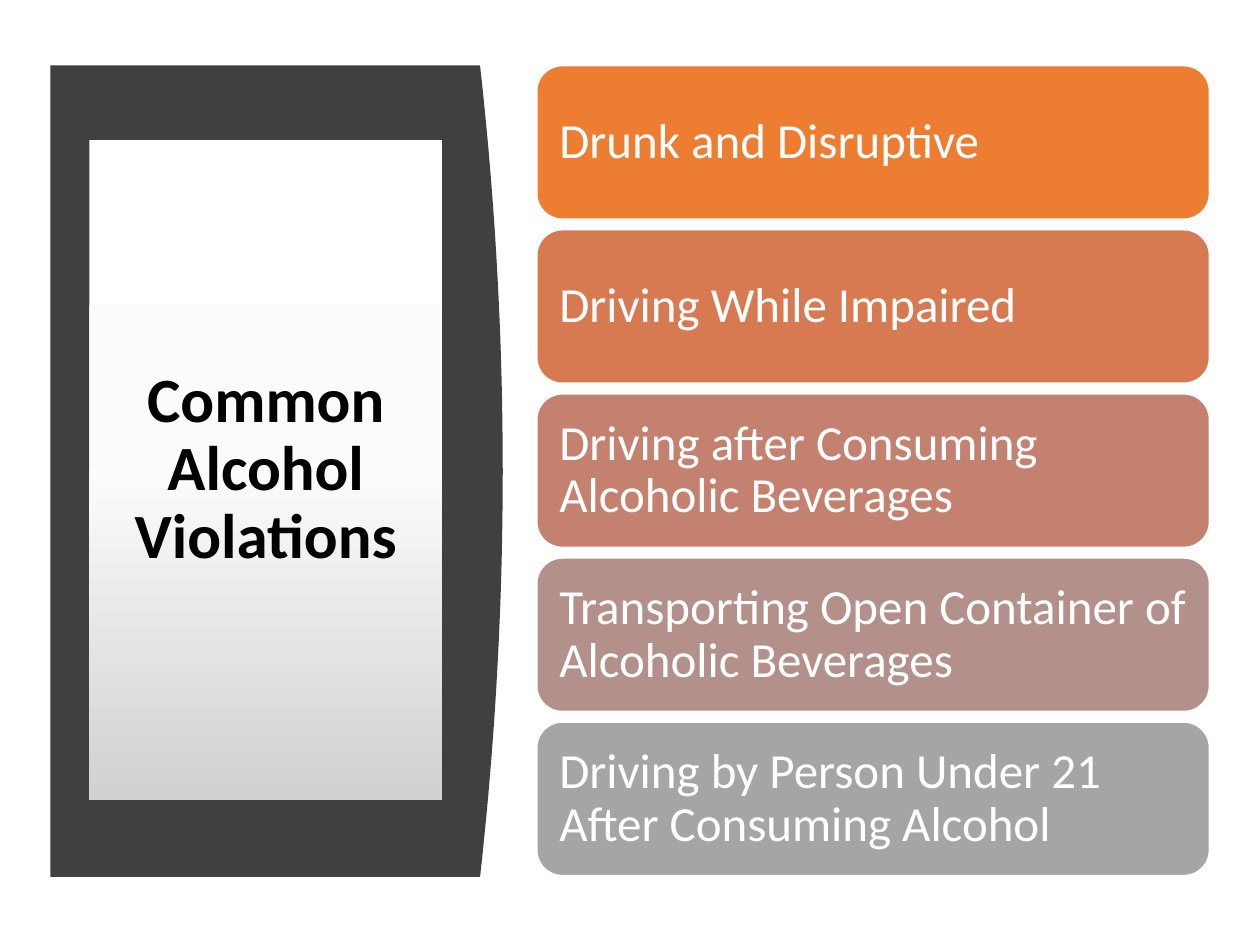
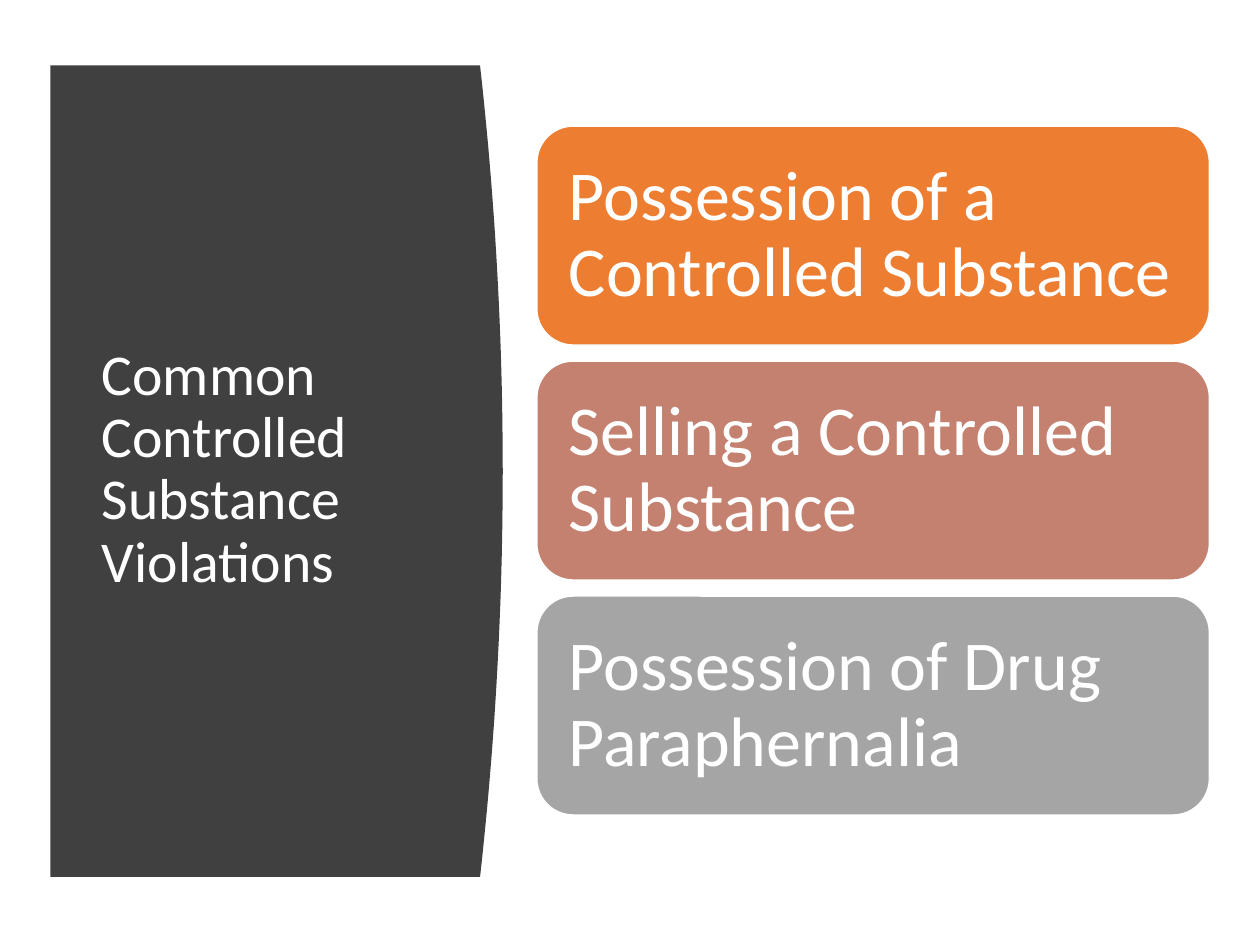
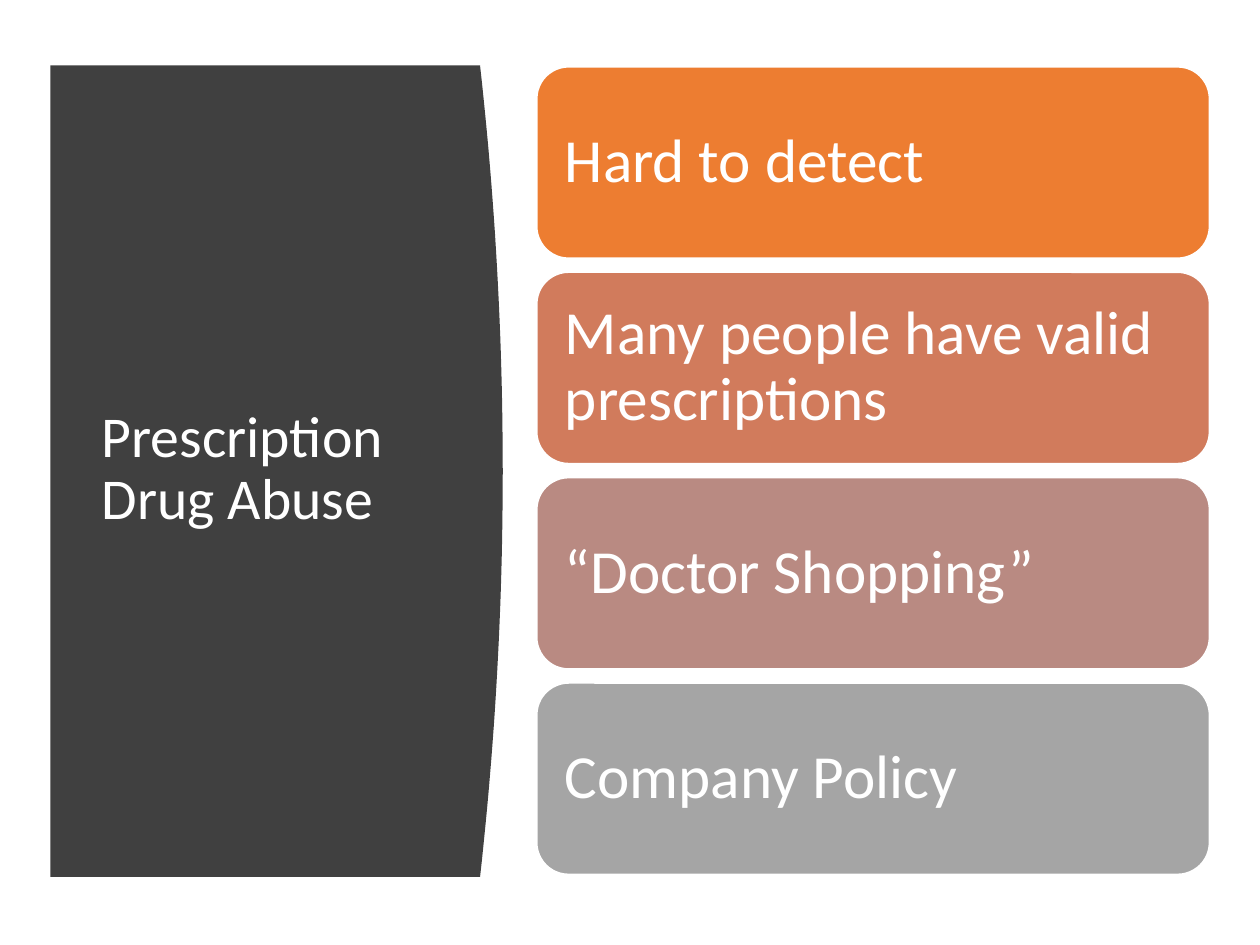
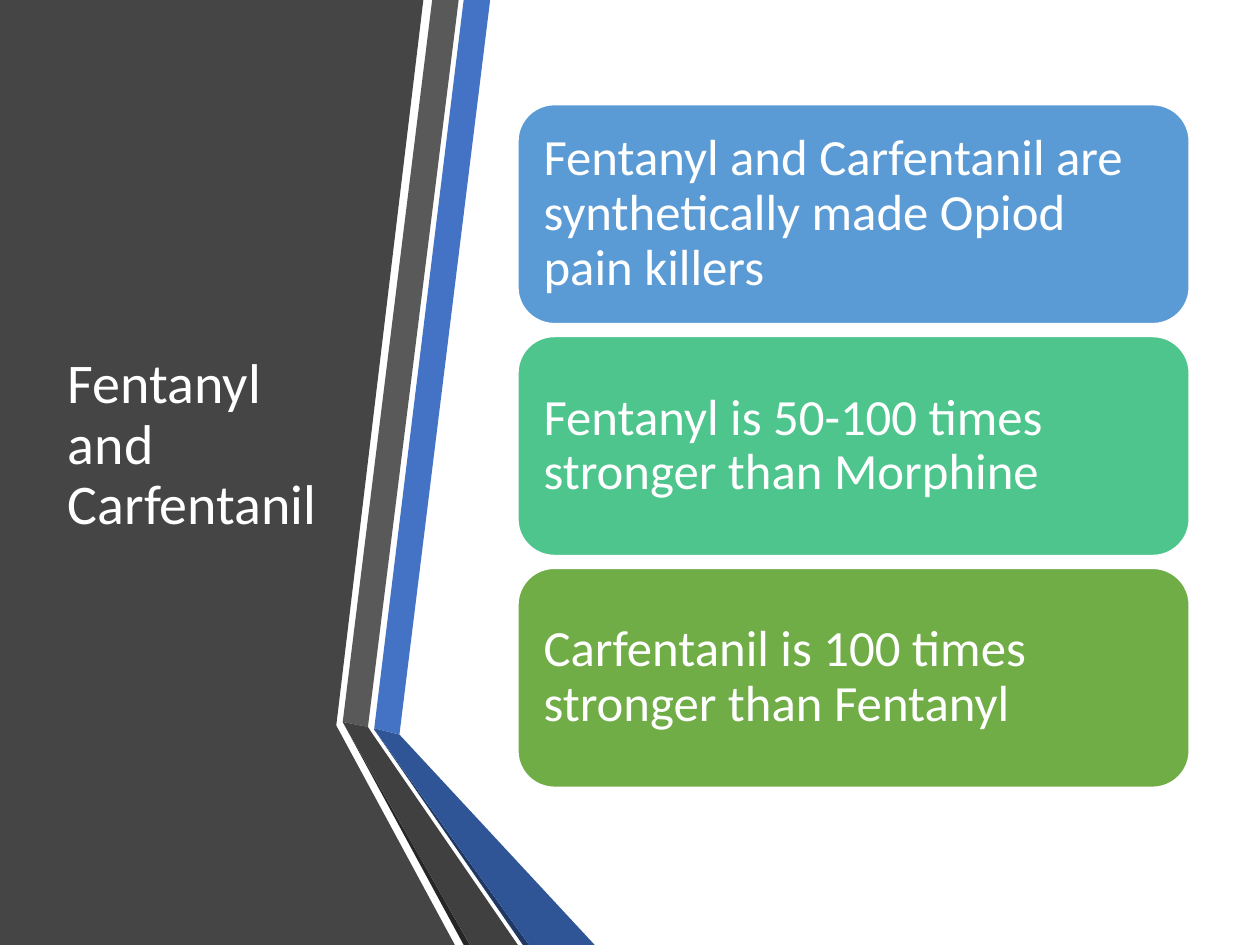
import copy
import dataclasses

import pptx
import pptx.dml.color
import pptx.enum.shapes
import pptx.enum.text
import pptx.util

RGB = pptx.dml.color.RGBColor
EMU_PER_PX = 9144
FONT = "Calibri"
BULGE_STEPS = 48

WHITE = RGB(0xFF, 0xFF, 0xFF)
BLACK = RGB(0x00, 0x00, 0x00)
CHARCOAL = RGB(0x40, 0x40, 0x40)
SLATE = RGB(0x45, 0x45, 0x45)
GREY = RGB(0x59, 0x59, 0x59)
SOOT = RGB(0x26, 0x26, 0x26)
NEAR_WHITE = RGB(0xFB, 0xFB, 0xFB)
LIGHT_GREY = RGB(0xD1, 0xD1, 0xD1)
ORANGE = RGB(0xED, 0x7D, 0x31)
COPPER = RGB(0xD8, 0x7A, 0x51)
TERRACOTTA = RGB(0xD1, 0x7B, 0x5C)
ROSE = RGB(0xC4, 0x81, 0x70)
MAUVE = RGB(0xB9, 0x8A, 0x82)
DUSK = RGB(0xB4, 0x90, 0x8B)
SILVER = RGB(0xA5, 0xA5, 0xA5)
BLUE = RGB(0x44, 0x72, 0xC4)
DEEP_BLUE = RGB(0x2F, 0x55, 0x97)
NAVY = RGB(0x20, 0x38, 0x64)
SKY = RGB(0x5B, 0x9B, 0xD5)
MINT = RGB(0x4D, 0xC5, 0x8D)
GREEN = RGB(0x70, 0xAD, 0x47)


@dataclasses.dataclass
class Box:
    left: int
    top: int
    width: int
    height: int

    def inner(self, left, top, width, height):
        return Box(self.left + left, self.top + top, width, height)

    def emu(self):
        return [px(value) for value in (self.left, self.top, self.width, self.height)]


SLIDE = Box(0, 0, 1000, 750)
PANEL = Box(40, 52, 359, 644)

FOLDED_RIBBONS = [
    (SLATE, [(0, 0), (336, 0), (267, 575), (267, 576), (361, 750), (0, 750)]),
    (BLUE, [(297, 578), (317, 583), (389, 0), (368, 0)]),
    (GREY, [(364, 0), (343, 0), (272, 573), (292, 577)]),
    (SOOT, [(272, 573), (368, 750), (373, 750)]),
    (NAVY, [(297, 579), (415, 750), (420, 750)]),
    (DEEP_BLUE, [(297, 579), (420, 750), (472, 750), (317, 583), (297, 578)]),
    (CHARCOAL, [(411, 750), (296, 583), (292, 577), (272, 573), (373, 750)]),
]


def px(value):
    return pptx.util.Emu(round(value * EMU_PER_PX))


def write_text(shape, text, size, color, bold=False, align=pptx.enum.text.PP_ALIGN.LEFT):
    frame = shape.text_frame
    frame.word_wrap = True
    frame.vertical_anchor = pptx.enum.text.MSO_ANCHOR.MIDDLE
    frame.text = text
    paragraph = frame.paragraphs[0]
    paragraph.alignment = align
    paragraph.line_spacing = 0.9
    for run in paragraph.runs:
        run.font.name = FONT
        run.font.size = pptx.util.Pt(size)
        run.font.bold = bold
        run.font.color.rgb = color


def add_polygon(slide, box, points, color):
    corners = [(px(box.left + x), px(box.top + y)) for x, y in points]
    builder = slide.shapes.build_freeform(*corners[0])
    builder.add_line_segments(corners[1:])
    shape = builder.convert_to_shape()
    shape.shadow.inherit = False
    shape.fill.solid()
    shape.fill.fore_color.rgb = color
    shape.line.fill.background()


def add_bulging_panel(slide, box):
    bulge = 18
    points = [(0, 0)]
    for step in range(BULGE_STEPS + 1):
        position = step / BULGE_STEPS
        points.append((box.width - bulge * (2 * position - 1) ** 2, box.height * position))
    points.append((0, box.height))
    add_polygon(slide, box, points, CHARCOAL)


def add_title(slide, box, text, size, color=WHITE, **style):
    title = slide.shapes.add_textbox(*box.emu())
    write_text(title, text, size, color, **style)
    return title


def fill_with_gradient(shape, colors):
    shape.fill.gradient()
    shape.fill.gradient_angle = 270
    stop_list = shape._element.xpath(".//a:gsLst")[0]
    stop_list.insert(1, copy.deepcopy(stop_list[0]))
    for index, (stop, color) in enumerate(zip(shape.fill.gradient_stops, colors)):
        stop.position = index / (len(colors) - 1)
        stop.color.rgb = color


def add_cards(slide, box, card_height, size, inset, cards):
    pitch = (box.height - card_height) / (len(cards) - 1)
    for index, (text, color) in enumerate(cards):
        place = box.inner(0, index * pitch, box.width, card_height)
        card = slide.shapes.add_shape(
            pptx.enum.shapes.MSO_SHAPE.ROUNDED_RECTANGLE, *place.emu())
        card.shadow.inherit = False
        card.fill.solid()
        card.fill.fore_color.rgb = color
        card.line.color.rgb = WHITE
        card.line.width = pptx.util.Pt(1)
        frame = card.text_frame
        frame.margin_left = frame.margin_right = px(inset)
        frame.margin_top = frame.margin_bottom = px(inset)
        write_text(card, text, size, WHITE)


def add_blank_slide(presentation):
    return presentation.slides.add_slide(presentation.slide_layouts[6])


def add_panel_slide(presentation, title, size, cards_box, *card_settings, **style):
    slide = add_blank_slide(presentation)
    add_bulging_panel(slide, PANEL)
    title_shape = add_title(slide, PANEL.inner(31, 59, 280, 524), title, size, **style)
    add_cards(slide, cards_box, *card_settings)
    return title_shape


def add_ribbon_slide(presentation, title, size, cards_box, *card_settings):
    slide = add_blank_slide(presentation)
    for color, points in FOLDED_RIBBONS:
        add_polygon(slide, SLIDE, points, color)
    add_title(slide, SLIDE.inner(44, 75, 228, 558), title, size)
    add_cards(slide, cards_box, *card_settings)


def main():
    presentation = pptx.Presentation()
    presentation.slide_width = px(SLIDE.width)
    presentation.slide_height = px(SLIDE.height)

    alcohol_title = add_panel_slide(
        presentation, "Common\vAlcohol Violations", 36,
        Box(426, 52, 534, 643), 122, 28, 12, [
            ("Drunk and Disruptive", ORANGE),
            ("Driving While Impaired", COPPER),
            ("Driving after Consuming Alcoholic Beverages", ROSE),
            ("Transporting Open Container of Alcoholic Beverages", DUSK),
            ("Driving by Person Under 21 After Consuming Alcohol", SILVER),
        ],
        color=BLACK, bold=True, align=pptx.enum.text.PP_ALIGN.CENTER)
    fill_with_gradient(alcohol_title, [WHITE, NEAR_WHITE, LIGHT_GREY])

    add_panel_slide(
        presentation, "Common Controlled Substance Violations", 33,
        Box(426, 100, 534, 547), 174, 40, 17, [
            ("Possession of a Controlled Substance", ORANGE),
            ("Selling a Controlled Substance", ROSE),
            ("Possession of Drug Paraphernalia", SILVER),
        ])

    add_panel_slide(
        presentation, "Prescription Drug Abuse", 33,
        Box(426, 53, 534, 641), 152, 35, 15, [
            ("Hard to detect", ORANGE),
            ("Many people have valid prescriptions", TERRACOTTA),
            ("“Doctor Shopping”", MAUVE),
            ("Company Policy", SILVER),
        ])

    add_ribbon_slide(
        presentation, "Fentanyl and Carfentanil", 32,
        Box(411, 83, 533, 542), 174, 29, 12, [
            ("Fentanyl and Carfentanil are synthetically made Opiod pain killers", SKY),
            ("Fentanyl is 50-100 times stronger than Morphine", MINT),
            ("Carfentanil is 100 times stronger than Fentanyl", GREEN),
        ])

    presentation.save("out.pptx")


if __name__ == "__main__":
    main()
